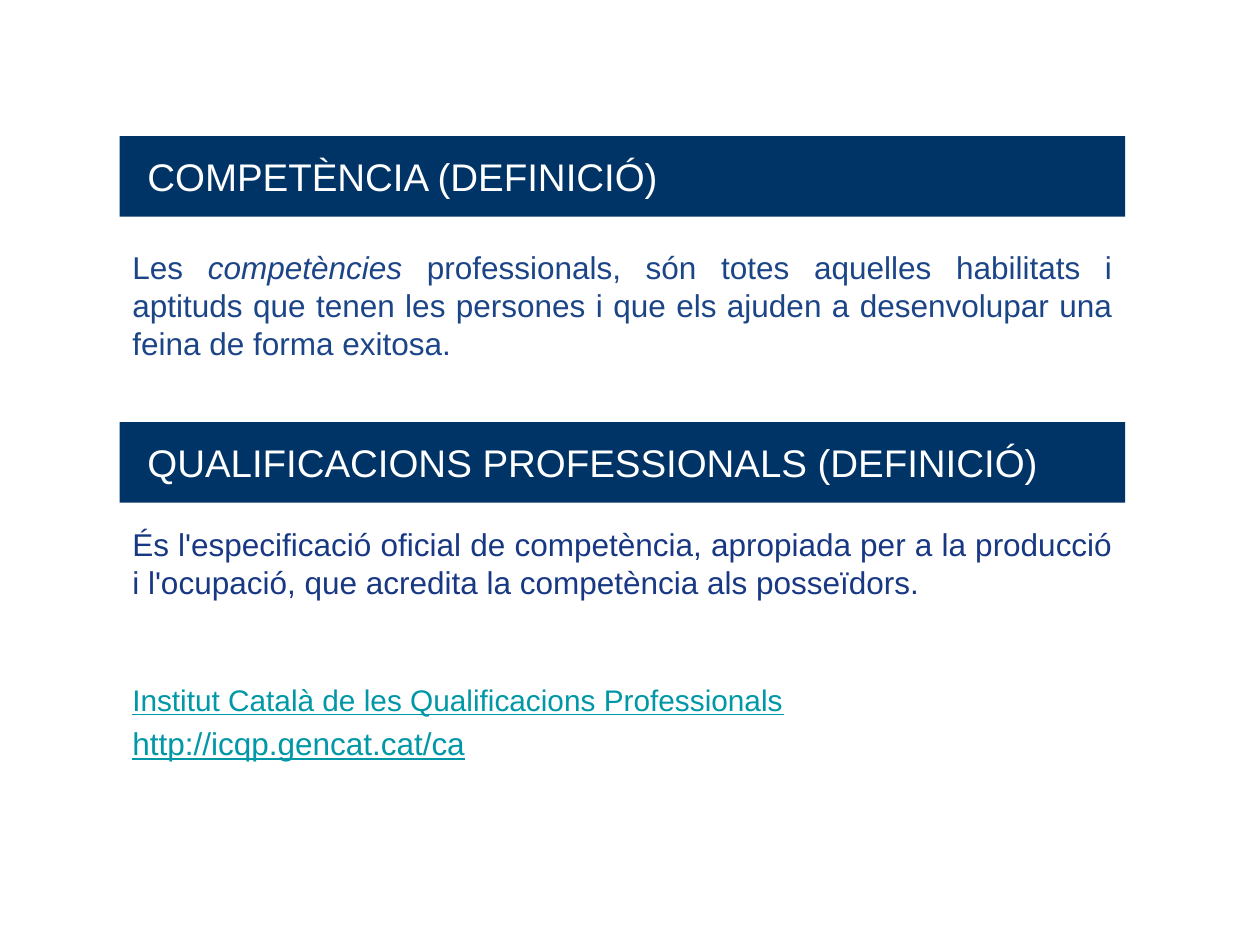
from pptx import Presentation
from pptx.dml.color import RGBColor
from pptx.enum.shapes import MSO_SHAPE
from pptx.enum.text import MSO_ANCHOR, MSO_AUTO_SIZE, PP_ALIGN
from pptx.oxml import parse_xml
from pptx.oxml.ns import nsdecls
from pptx.util import Inches, Pt

NAVY = RGBColor(0x00, 0x33, 0x66)
WHITE = RGBColor(0xFF, 0xFF, 0xFF)
BLUE = RGBColor(0x1C, 0x45, 0x87)
INDIGO = RGBColor(0x18, 0x38, 0x83)
TEAL = RGBColor(0x00, 0x97, 0xA7)
LEFT, WIDTH, BAR = 0.95, 7.98, 0.64

HEADS = [
    (1.08, "COMPETÈNCIA (DEFINICIÓ)"),
    (3.35, "QUALIFICACIONS PROFESSIONALS (DEFINICIÓ)"),
]
BODIES = [
    (1.92, 1.01, [
        (["Les ", ("competències",), " professionals, són totes aquelles habilitats i aptituds "
          "que tenen les persones i que els ajuden a desenvolupar una feina de forma exitosa."],
         dict(color=BLUE, align=PP_ALIGN.JUSTIFY)),
    ]),
    (4.12, 2.45, [
        (["És l'especificació oficial de competència, apropiada per a la producció i l'ocupació, "
          "que acredita la competència als posseïdors."],
         dict(color=INDIGO, align=PP_ALIGN.JUSTIFY)),
        (["Institut Català de les Qualificacions Professionals"],
         dict(color=TEAL, size=17, under=True, before=43, line=1.15)),
        (["http://icqp.gencat.cat/ca"],
         dict(color=TEAL, under=True, before=4)),
    ]),
]


def write(para, parts, color, size=18, align=PP_ALIGN.LEFT, under=False, before=0, line=1.0):
    para.alignment = align
    para.space_before = Pt(before)
    para.line_spacing = line
    props = para._p.get_or_add_pPr()
    props.set("marL", "0")
    props.set("indent", "0")
    props.append(parse_xml(f"<a:buNone {nsdecls('a')}/>"))
    for part in parts:
        slant = isinstance(part, tuple)
        run = para.add_run()
        run.text = part[0] if slant else part
        font = run.font
        font.name, font.size = "Arial", Pt(size)
        font.italic, font.underline = slant, under
        font.color.rgb = color


def place(shape, top, high, inset, anchor):
    shape.left, shape.top = Inches(LEFT), Inches(top)
    shape.width, shape.height = Inches(WIDTH), Inches(high)
    frame = shape.text_frame
    frame.word_wrap = True
    frame.auto_size = MSO_AUTO_SIZE.NONE
    frame.vertical_anchor = anchor
    frame.margin_left, frame.margin_right = Inches(inset), Inches(0.1)
    frame.margin_top = frame.margin_bottom = Inches(0.05)
    return frame


deck = Presentation()
deck.slide_width, deck.slide_height = Inches(10), Inches(7.5)
slide = deck.slides.add_slide(deck.slide_layouts[3])
title, *bodies = list(slide.placeholders)[:3]
band = slide.shapes.add_shape(MSO_SHAPE.RECTANGLE, 0, 0, Inches(WIDTH), Inches(BAR))
band.shadow.inherit = False

for shape, (top, text) in zip([title, band], HEADS):
    frame = place(shape, top, BAR, 0.22, MSO_ANCHOR.MIDDLE)
    shape.fill.solid()
    shape.fill.fore_color.rgb = NAVY
    shape.line.fill.background()
    write(frame.paragraphs[0], [text], WHITE, size=22)

for shape, (top, high, paras) in zip(bodies, BODIES):
    frame = place(shape, top, high, 0.1, MSO_ANCHOR.TOP)
    for i, (parts, form) in enumerate(paras):
        para = frame.add_paragraph() if i else frame.paragraphs[0]
        write(para, parts, **form)

deck.save("out.pptx")
